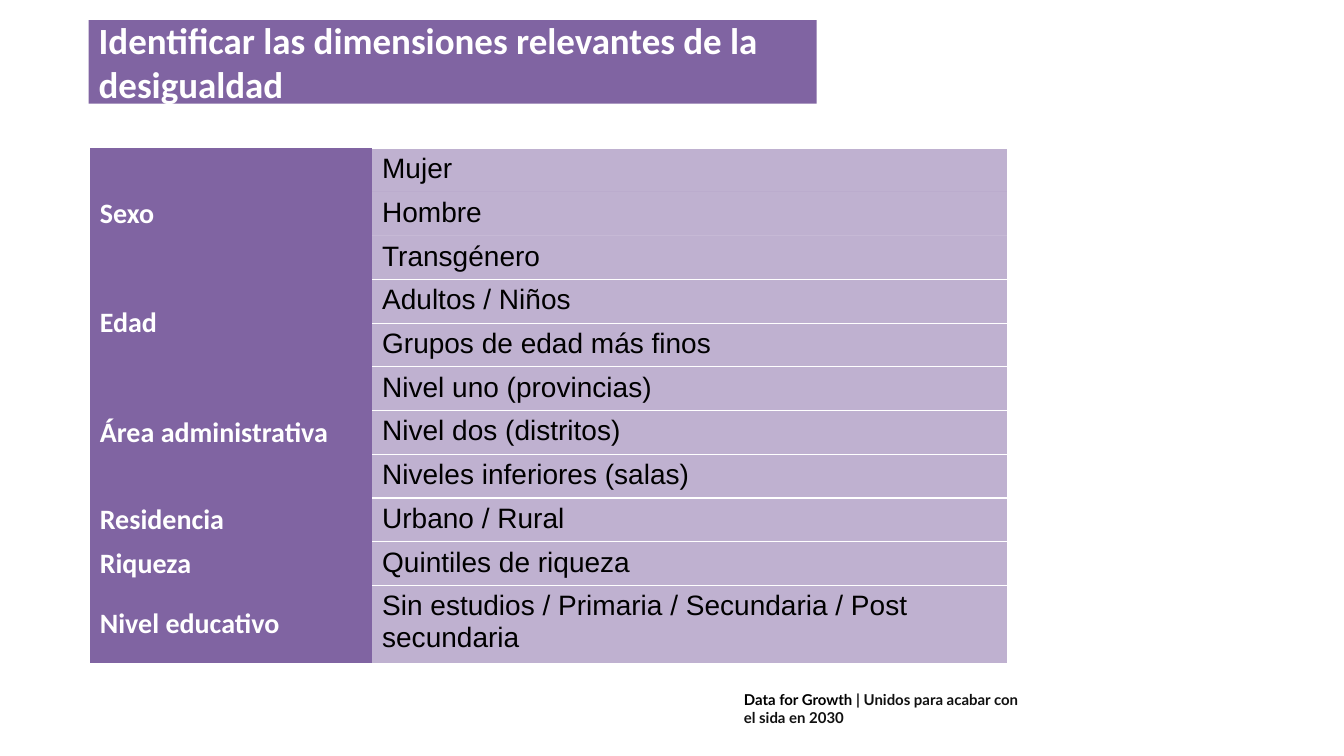
from lxml import etree
from pptx import Presentation
from pptx import util as u
from pptx.dml.color import RGBColor
from pptx.enum import shapes, text
from pptx.oxml import ns

PX = 9144
HEX = {"violet": "8064A2", "white": "FFFFFF", "black": "000000", "ink": "111111"}
PLAIN = "{2D5ABB26-0587-4C30-8999-92F81FD0307C}"
ROW = 41
GROUPS = [
    ("Sexo", ["Mujer", "Hombre", "Transgénero"]),
    ("Edad", ["Adultos / Niños", "Grupos de edad más finos"]),
    ("Área administrativa", ["Nivel uno (provincias)", "Nivel dos (distritos)",
                             "Niveles inferiores (salas)"]),
    ("Residencia", ["Urbano / Rural"]),
    ("Riqueza", ["Quintiles de riqueza"]),
    ("Nivel educativo", ["Sin estudios / Primaria / Secundaria / Post secundaria"]),
]
RULED = {"Nivel dos (distritos)"}


def px(*nums):
    """Turn px lengths into EMU."""
    return [u.Emu(n * PX) for n in nums]


def write(frame, words, size=20, font="Calibri", color="white", bold=True):
    """Add a formatted run to the first paragraph of a frame."""
    para = frame.paragraphs[0]
    para.alignment = text.PP_ALIGN.LEFT
    run = para.add_run()
    run.text = words
    run.font.size = u.Pt(size)
    run.font.name = font
    run.font.bold = bold
    run.font.color.rgb = RGBColor.from_string(HEX[color])


def paint(item, color):
    """Give a shape or cell a solid fill."""
    item.fill.solid()
    item.fill.fore_color.rgb = RGBColor.from_string(HEX[color])


def edge(cell, sides):
    """Draw white 1 pt borders on the named sides of a cell."""
    props = cell._tc.get_or_add_tcPr()
    for side in sides:
        line = etree.SubElement(props, ns.qn("a:ln" + side), w="12700")
        fill = etree.SubElement(line, ns.qn("a:solidFill"))
        etree.SubElement(fill, ns.qn("a:srgbClr"), val=HEX["white"])


def fade(cell, share):
    """Make a cell's solid fill partly clear."""
    tone = cell._tc.tcPr.find(ns.qn("a:solidFill"))[0]
    etree.SubElement(tone, ns.qn("a:alpha"), val=str(share * 1000))


def title(slide, box):
    """Place the title band."""
    band = slide.shapes.add_shape(shapes.MSO_SHAPE.RECTANGLE, *px(*box))
    band.shadow.inherit = False
    paint(band, "violet")
    band.line.fill.background()
    band.text_frame.word_wrap = True
    band.text_frame.vertical_anchor = text.MSO_ANCHOR.MIDDLE
    write(band.text_frame, "Identificar las dimensiones relevantes de la desigualdad",
          size=26.4)


def grid(slide, box, head):
    """Place the table of dimensions with a merged head cell for each group."""
    count = sum(len(items) for _, items in GROUPS)
    table = slide.shapes.add_table(count, 2, *px(*box)).table
    table.first_row = table.horz_banding = False
    table._tbl.tblPr.find(ns.qn("a:tableStyleId")).text = PLAIN
    for col, wide in zip(table.columns, px(head, box[2] - head)):
        col.width = wide
    for row in table.rows:
        row.height = px(ROW)[0]
    top = 0
    for name, items in GROUPS:
        lead = table.cell(top, 0)
        if len(items) > 1:
            lead.merge(table.cell(top + len(items) - 1, 0))
        lead.vertical_anchor = text.MSO_ANCHOR.MIDDLE
        paint(lead, "violet")
        write(lead.text_frame, name)
        for step, item in enumerate(items):
            cell = table.cell(top + step, 1)
            edge(cell, "RT" if step == 0 or item in RULED else "R")
            paint(cell, "violet")
            fade(cell, 50)
            write(cell.text_frame, item, font="Arial", color="black", bold=False)
        top += len(items)


def footer(slide, box):
    """Place the footer line."""
    frame = slide.shapes.add_textbox(*px(*box)).text_frame
    frame.word_wrap = True
    frame.auto_size = text.MSO_AUTO_SIZE.SHAPE_TO_FIT_TEXT
    write(frame, "Data for Growth", size=10.7, font="Lato", color="black")
    write(frame, " | Unidos para acabar con el sida en 2030", size=10.7,
          font="Lato", color="ink")


def main():
    """Build and save the slide."""
    deck = Presentation()
    deck.slide_width, deck.slide_height = px(1333, 750)
    slide = deck.slides.add_slide(deck.slide_layouts[6])
    footer(slide, (728, 680, 306, 28))
    title(slide, (88, 20, 722, 83))
    grid(slide, (89, 147, 910, 477), 280)
    deck.save("out.pptx")


if __name__ == "__main__":
    main()
